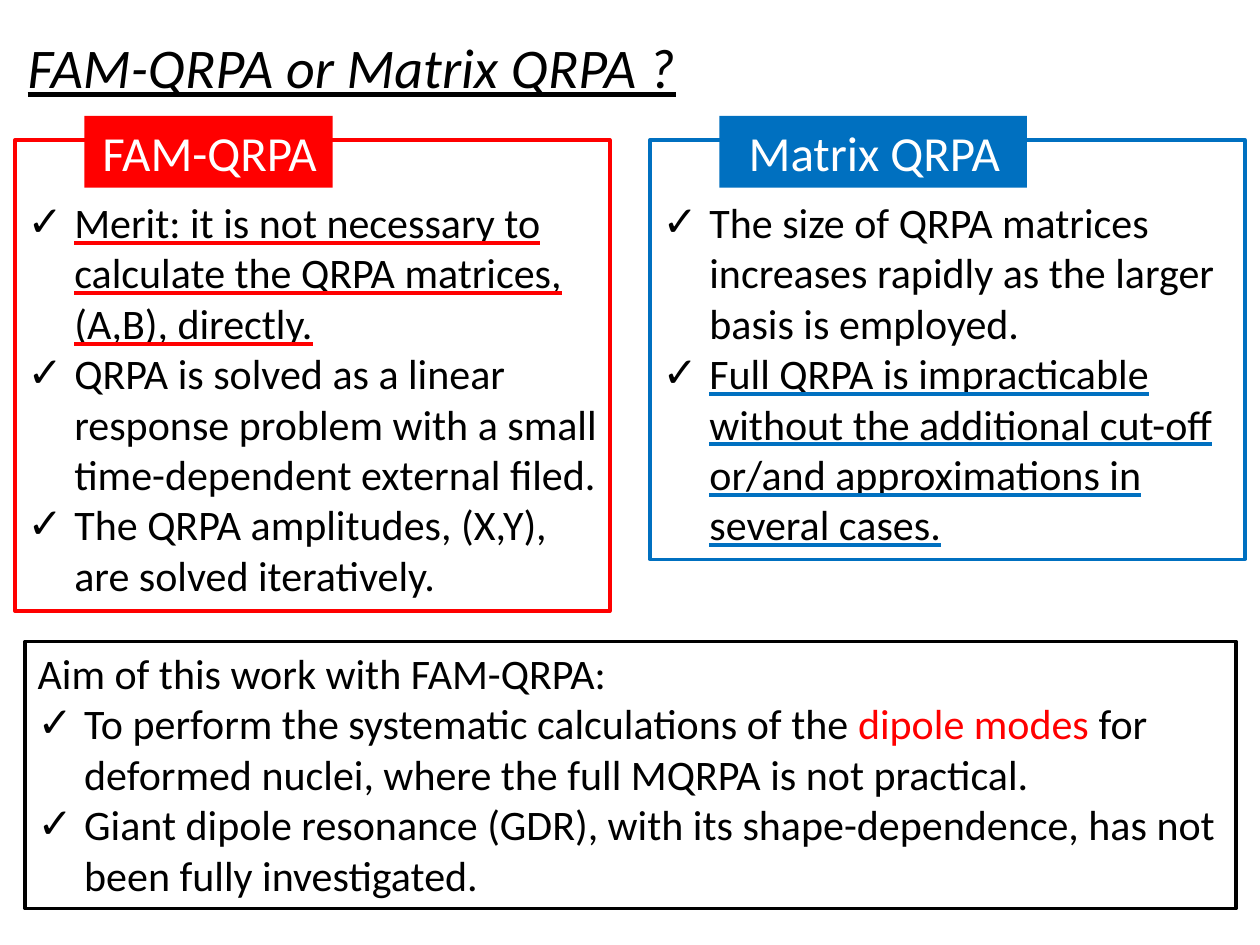
from lxml.etree import SubElement
from pptx import Presentation
from pptx.dml.color import RGBColor
from pptx.enum.shapes import MSO_SHAPE
from pptx.enum.text import MSO_ANCHOR, MSO_AUTO_SIZE, PP_ALIGN
from pptx.oxml import parse_xml
from pptx.oxml.ns import nsdecls, qn
from pptx.util import Inches, Pt

COLORS = {"black": "000000", "white": "FFFFFF", "red": "FF0000", "blue": "0070C0"}
INDENT = Inches(0.37)
LINE_SKIP = 0.4  # about one 24 pt line, kept free below each label


def rgb(name):
    return RGBColor.from_string(COLORS[name])


def place(s, left, top, width, height):
    s.left, s.top = Inches(left), Inches(top)
    s.width, s.height = Inches(width), Inches(height)


def set_frame(s, skip=0):
    values = {
        "word_wrap": True, "auto_size": MSO_AUTO_SIZE.NONE,
        "vertical_anchor": MSO_ANCHOR.TOP,
        "margin_left": Inches(0.1), "margin_right": Inches(0.08),
        "margin_top": Inches(0.05 + skip), "margin_bottom": Inches(0.05),
    }
    for name, value in values.items():
        setattr(s.text_frame, name, value)


def add_run(p, text, size=24, color="black", **formats):
    r = p.add_run()
    r.text = text
    for name, value in {"name": "Calibri", "size": Pt(size), **formats}.items():
        setattr(r.font, name, value)
    r.font.color.rgb = rgb(color)
    return r


def add_underlined(p, text, color):
    """Add a run with an underline in its own colour."""
    r = add_run(p, text, underline=True)
    fill = parse_xml(
        f'<a:uFill {nsdecls("a")}><a:solidFill>'
        f'<a:srgbClr val="{COLORS[color]}"/></a:solidFill></a:uFill>')
    r.font._element.find(qn("a:solidFill")).addnext(fill)


def set_paragraph(p, align=PP_ALIGN.LEFT, check=False):
    p.alignment = align
    p.space_before = p.space_after = Pt(0)
    p.line_spacing = 1.0
    pPr = p._p.get_or_add_pPr()
    pPr.set("marL", str(INDENT if check else 0))
    pPr.set("indent", str(-INDENT if check else 0))
    if check:
        SubElement(pPr, qn("a:buFont")).set("typeface", "Arial")
        SubElement(pPr, qn("a:buChar")).set("char", "✓")
    else:
        SubElement(pPr, qn("a:buNone"))


def add_items(tf, items, underline_color="black"):
    """Each item is (style, text pieces); style is 'plain', 'check' or 'key'."""
    for i, (style, pieces) in enumerate(items):
        p = tf.add_paragraph() if i else tf.paragraphs[0]
        set_paragraph(p, check=style != "plain")
        for text, color in pieces:
            if style == "key":
                add_underlined(p, text, underline_color)
            else:
                add_run(p, text, color=color)


def outline(s, color):
    s.fill.background()
    s.line.color.rgb = rgb(color)
    s.line.width = Pt(2)


def add_rect(slide, box):
    s = slide.shapes.add_shape(MSO_SHAPE.RECTANGLE, *map(Inches, box))
    s.shadow.inherit = False
    return s


def add_label(slide, text, color, box):
    s = add_rect(slide, box)
    s.fill.solid()
    s.fill.fore_color.rgb = rgb(color)
    s.line.fill.background()
    set_frame(s)
    p = s.text_frame.paragraphs[0]
    set_paragraph(p, PP_ALIGN.CENTER)
    add_run(p, text, 28, "white")


def fill_title(s, text):
    place(s, 0.12, 0.21, 6.3, 0.64)
    set_frame(s)
    p = s.text_frame.paragraphs[0]
    set_paragraph(p)
    add_run(p, text, 32, italic=True, underline=True)


def fill_panel(s, left, height, color, items):
    place(s, left, 1.11, 4.72, height)
    outline(s, color)
    set_frame(s, LINE_SKIP)
    add_items(s.text_frame, items, color)


def add_aim(slide, items):
    s = add_rect(slide, (0.2, 5.09, 9.61, 2.12))
    outline(s, "black")
    set_frame(s)
    add_items(s.text_frame, items)


def main():
    prs = Presentation()
    prs.slide_width, prs.slide_height = Inches(10), Inches(7.5)
    slide = prs.slides.add_slide(prs.slide_layouts[3])
    title, left_body, right_body = list(slide.placeholders)[:3]

    # Title
    fill_title(title, "FAM-QRPA or Matrix QRPA ?")

    # The two methods
    fill_panel(left_body, 0.12, 3.74, "red", [
        ("key", [("Merit: it is not necessary to calculate the QRPA matrices, "
                  "(A,B), directly.", "black")]),
        ("check", [("QRPA is solved as a linear response problem with a small "
                    "time-dependent external filed.", "black")]),
        ("check", [("The QRPA amplitudes, (X,Y), are solved iteratively.", "black")]),
    ])
    fill_panel(right_body, 5.16, 3.33, "blue", [
        ("check", [("The size of QRPA matrices increases rapidly as the larger "
                    "basis is employed.", "black")]),
        ("key", [("Full QRPA is impracticable without the additional cut-off "
                  "or/and approximations in several cases.", "black")]),
    ])
    add_label(slide, "FAM-QRPA", "red", (0.67, 0.92, 1.97, 0.57))
    add_label(slide, "Matrix QRPA", "blue", (5.71, 0.92, 2.44, 0.57))

    # Aim of the work
    add_aim(slide, [
        ("plain", [("Aim of this work with FAM-QRPA:", "black")]),
        ("check", [("To perform the systematic calculations of the ", "black"),
                   ("dipole modes", "red"),
                   (" for deformed nuclei, where the full MQRPA is not practical.",
                    "black")]),
        ("check", [("Giant dipole resonance (GDR), with its shape-dependence, "
                    "has not been fully investigated.", "black")]),
    ])
    prs.save("out.pptx")


if __name__ == "__main__":
    main()
